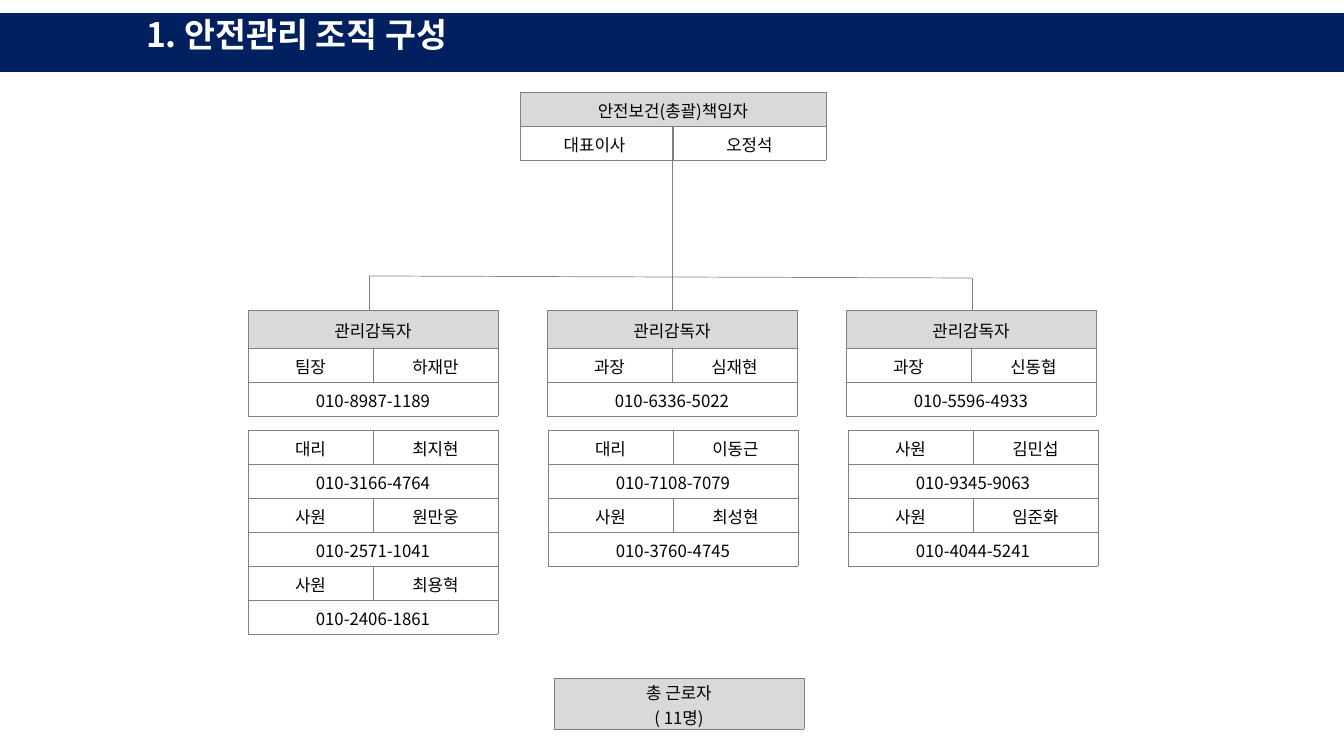
from lxml.etree import SubElement
from pptx import Presentation
from pptx.dml.color import RGBColor
from pptx.enum.shapes import MSO_CONNECTOR as Connector, MSO_SHAPE as Preset
from pptx.enum.text import MSO_ANCHOR as Anchor, MSO_AUTO_SIZE as AutoSize, PP_ALIGN as Align
from pptx.oxml.ns import qn
from pptx.util import Emu, Pt

FONT = "Noto Sans CJK KR"
COLORS = {"navy": "002060", "white": "FFFFFF", "black": "000000", "line": "808080", "head": "D9D9D9"}
ROW = 34
BOX_WIDTH = 250

SUPERVISORS = [
    ("팀장", "하재만", "010-8987-1189"),
    ("과장", "심재현", "010-6336-5022"),
    ("과장", "신동협", "010-5596-4933"),
]
MEMBERS = [
    [("대리", "최지현", "010-3166-4764"), ("사원", "원만웅", "010-2571-1041"), ("사원", "최용혁", "010-2406-1861")],
    [("대리", "이동근", "010-7108-7079"), ("사원", "최성현", "010-3760-4745")],
    [("사원", "김민섭", "010-9345-9063"), ("사원", "임준화", "010-4044-5241")],
]


def px(length):
    return Emu(round(length * 914400 / 100.8))


def color(name):
    return RGBColor.from_string(COLORS[name])


def format_paragraph(paragraph, size, color_name, bold, align):
    paragraph.alignment = align
    font = paragraph.font
    font.name, font.size, font.bold = FONT, Pt(size), bold
    font.color.rgb = color(color_name)
    properties = paragraph._p.pPr.find(qn("a:defRPr"))
    SubElement(properties, qn("a:ea")).set("typeface", FONT)


def add_title_band(slide, left, top, width, height):
    band = slide.shapes.add_shape(Preset.RECTANGLE, px(left), px(top), px(width), px(height))
    band.shadow.inherit = False
    band.fill.solid()
    band.fill.fore_color.rgb = color("navy")
    band.line.color.rgb = color("navy")
    band.line.width = Pt(1)
    title = slide.shapes.title
    band.element.addnext(title.element)
    title.left, title.top, title.width, title.height = px(left + 136), px(top), px(1072), px(height)
    frame = title.text_frame
    frame.text = "1. 안전관리 조직 구성"
    frame.auto_size = AutoSize.NONE
    frame.vertical_anchor = Anchor.TOP
    frame.margin_top = frame.margin_bottom = 0
    format_paragraph(frame.paragraphs[0], 24, "white", True, Align.LEFT)


def add_line(slide, start, end):
    line = slide.shapes.add_connector(Connector.STRAIGHT, *map(px, start + end))
    line.line.color.rgb = color("line")
    line.line.width = Pt(0.5)
    SubElement(line._element.spPr, qn("a:effectLst"))


def add_borders(cell):
    properties = cell._tc.get_or_add_tcPr()
    for side in ("L", "R", "T", "B"):
        border = SubElement(properties, qn(f"a:ln{side}"), w=str(Pt(0.25)))
        fill = SubElement(border, qn("a:solidFill"))
        SubElement(fill, qn("a:srgbClr"), val=COLORS["line"])


def format_cell(cell, text, is_head):
    add_borders(cell)
    if is_head:
        cell.fill.solid()
        cell.fill.fore_color.rgb = color("head")
    else:
        cell.fill.background()
    cell.margin_top, cell.margin_bottom = px(2), 0
    cell.vertical_anchor = Anchor.MIDDLE
    cell.text = text
    for paragraph in cell.text_frame.paragraphs:
        format_paragraph(paragraph, 12, "black", False, Align.CENTER)


def add_box(slide, left, top, width, rows, heights, has_head):
    columns = max(map(len, rows))
    frame = slide.shapes.add_table(len(rows), columns, px(left), px(top), px(width), px(sum(heights)))
    table = frame.table
    table.first_row = table.horz_banding = False
    for column in table.columns:
        column.width = px(width / columns)
    for index, (texts, height) in enumerate(zip(rows, heights)):
        table.rows[index].height = px(height)
        if len(texts) < columns:
            table.cell(index, 0).merge(table.cell(index, columns - 1))
        for position in range(columns):
            cell = table.cell(index, position)
            if cell.is_spanned:
                add_borders(cell)
            else:
                format_cell(cell, texts[position], has_head and index == 0)


def add_branches(slide, left, top, right, bottom):
    add_line(slide, (left, top), (left, bottom))
    add_line(slide, (right, top + 2), (left, top))
    add_line(slide, (right, top + 2), (right, bottom))


def add_team(slide, left, top, member_left, supervisor, members):
    role, name, phone = supervisor
    add_box(slide, left, top, BOX_WIDTH, [["관리감독자"], [role, name], [phone]], [38, ROW, ROW], True)
    for index, (role, name, phone) in enumerate(members):
        member_top = top + 120 + index * 2 * ROW
        add_box(slide, member_left, member_top, BOX_WIDTH, [[role, name], [phone]], [ROW, ROW], False)


def build_organization_slide(presentation):
    slide = presentation.slides.add_slide(presentation.slide_layouts[5])
    add_title_band(slide, 0, 14, 1344, 57)
    add_line(slide, (672, 94), (672, 310))
    add_box(slide, 520, 92, 306, [["안전보건(총괄)책임자"], ["대표이사 ", "오정석"]], [ROW, ROW], True)
    add_branches(slide, 369, 276, 972, 310)
    for index, (supervisor, members) in enumerate(zip(SUPERVISORS, MEMBERS)):
        add_team(slide, 248 + index * 299, 310, 248 + index * 300, supervisor, members)
    add_box(slide, 554, 678, BOX_WIDTH, [["총 근로자\n( 11명)"]], [51], True)


def main():
    presentation = Presentation()
    presentation.slide_width, presentation.slide_height = px(1344), px(756)
    build_organization_slide(presentation)
    presentation.save("out.pptx")


if __name__ == "__main__":
    main()
